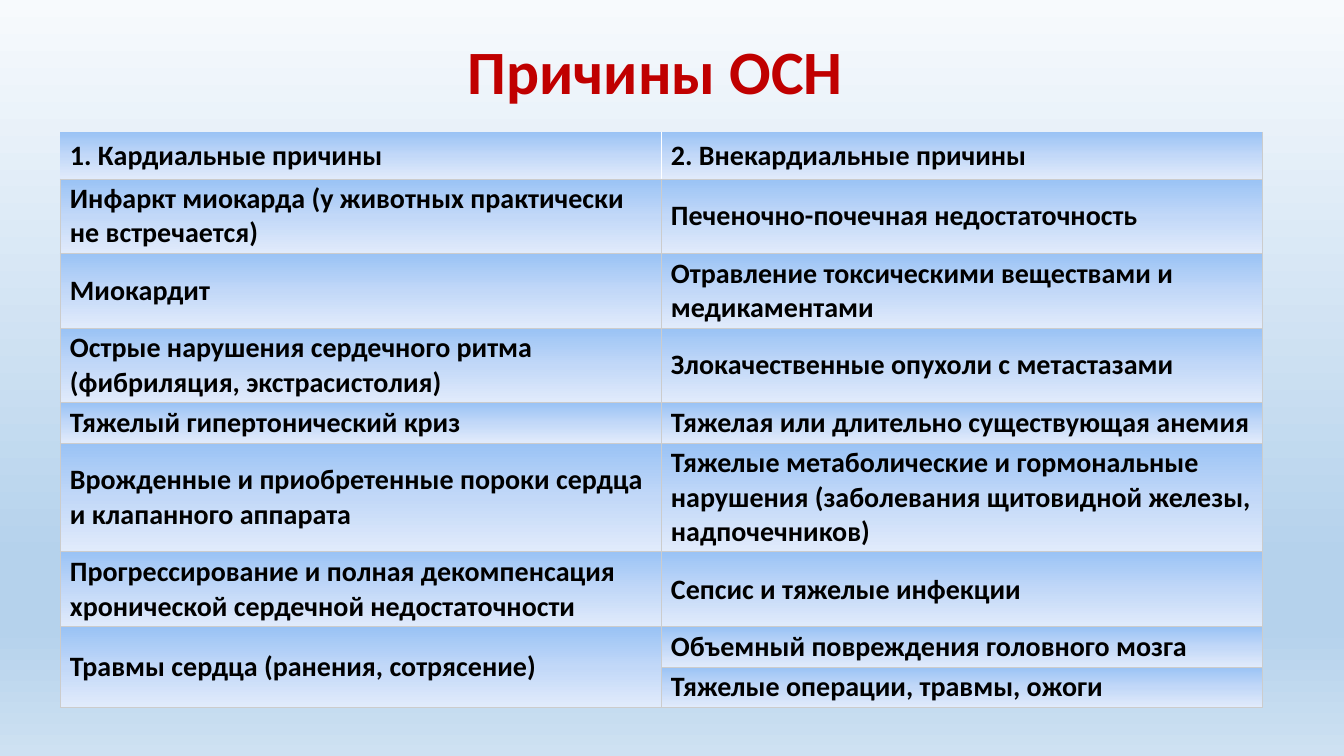
from lxml.etree import SubElement
from pptx import Presentation
from pptx.dml.color import RGBColor
from pptx.enum.text import MSO_ANCHOR as Anchor, PP_ALIGN as Align
from pptx.oxml.ns import qn
from pptx.util import Pt

PX = 914400 / 100.8
GREY, WHITE = "CCCCCC", "FFFFFF"
CELL_STOPS = [(0, "9AC3F5"), (50, "C2D8F8"), (100, "E1EBFB")]
PAGE_STOPS = [(0, "F7FAFD"), (74, "B5D2EC"), (83, "B5D2EC"), (100, "CEE1F2")]
ROW_HEIGHTS = [47, 74, 74, 74, 40, 109, 75, 40, 39]
CAUSES = [
    ("1. Кардиальные причины", "2. Внекардиальные причины"),
    ("Инфаркт миокарда (у животных практически не встречается)",
     "Печеночно-почечная недостаточность"),
    ("Миокардит", "Отравление токсическими веществами и медикаментами"),
    ("Острые нарушения сердечного ритма (фибриляция, экстрасистолия)",
     "Злокачественные опухоли с метастазами"),
    ("Тяжелый гипертонический криз", "Тяжелая или длительно существующая анемия"),
    ("Врожденные и приобретенные пороки сердца и клапанного аппарата",
     "Тяжелые метаболические и гормональные нарушения "
     "(заболевания щитовидной железы, надпочечников)"),
    ("Прогрессирование и полная декомпенсация хронической сердечной недостаточности",
     "Сепсис и тяжелые инфекции"),
    ("Травмы сердца (ранения, сотрясение)", "Объемный повреждения головного мозга"),
    ("", "Тяжелые операции, травмы, ожоги"),
]


def px(length):
    return round(length * PX)


def add_gradient(parent, stops):
    gradient = SubElement(parent, qn("a:gradFill"), rotWithShape="1")
    stop_list = SubElement(gradient, qn("a:gsLst"))
    for position, colour in stops:
        stop = SubElement(stop_list, qn("a:gs"), pos=str(position * 1000))
        SubElement(stop, qn("a:srgbClr"), val=colour)
    SubElement(gradient, qn("a:lin"), ang="5400000", scaled="0")
    return gradient


deck = Presentation()
deck.slide_width, deck.slide_height = px(1344), px(756)
page = deck.slides.add_slide(deck.slide_layouts[5])

page.background.fill.solid()
solid = page.element.find(".//" + qn("p:bgPr") + "/" + qn("a:solidFill"))
background = solid.getparent()
background.replace(solid, add_gradient(background, PAGE_STOPS))

title = page.shapes.title
title.left, title.top, title.width, title.height = px(76), px(35), px(1159), px(80)
title.text_frame.text = "Причины ОСН"
title.text_frame.vertical_anchor = Anchor.MIDDLE
para = title.text_frame.paragraphs[0]
para.alignment = Align.CENTER
para.line_spacing = 0.9
font = para.runs[0].font
font.name, font.size, font.bold = "Calibri", Pt(44), True
font.color.rgb = RGBColor.from_string("C00000")

frame = page.shapes.add_table(len(CAUSES), 2, px(60), px(132), px(1202), px(sum(ROW_HEIGHTS)))
table = frame.table
table.horz_banding = False
for column in table.columns:
    column.width = px(601)

for row_index, (height, causes) in enumerate(zip(ROW_HEIGHTS, CAUSES)):
    table.rows[row_index].height = px(height)
    header = row_index == 0
    for column_index, cause in enumerate(causes):
        cell = table.cell(row_index, column_index)
        cell.text = cause
        cell.vertical_anchor = Anchor.MIDDLE
        cell.margin_left = cell.margin_right = px(10)
        cell.margin_top = cell.margin_bottom = px(5 if header else 3)
        para = cell.text_frame.paragraphs[0]
        for font in [para.font] + [span.font for span in para.runs]:
            font.name, font.size, font.bold = "Calibri", Pt(20), True
            font.color.rgb = RGBColor.from_string("000000")

        edges = {"L": GREY, "R": GREY, "T": GREY, "B": GREY}
        if header:
            edges["T"] = None
            edges["L"] = WHITE if column_index else None
            edges["R"] = GREY if column_index else WHITE
        properties = cell._tc.get_or_add_tcPr()
        for side, colour in edges.items():
            line = SubElement(properties, qn("a:ln" + side), w=str(Pt(0.75)))
            if colour:
                SubElement(SubElement(line, qn("a:solidFill")), qn("a:srgbClr"), val=colour)
            else:
                SubElement(line, qn("a:noFill"))
        add_gradient(properties, CELL_STOPS)

table.cell(7, 0).merge(table.cell(8, 0))

deck.save("out.pptx")
